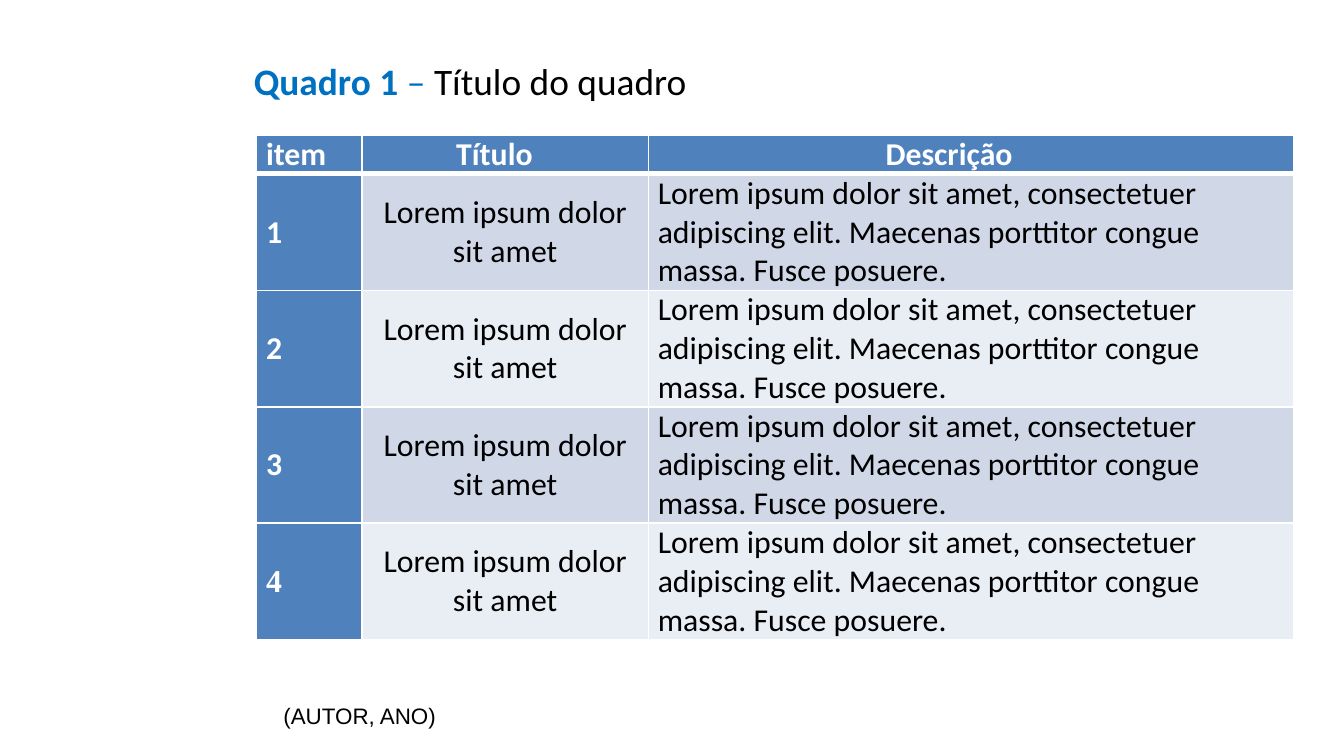
import pptx
import pptx.util
import pptx.dml.color
import pptx.enum.text
import pptx.oxml.ns
import lxml.etree

PX = 4572
WHITE = pptx.dml.color.RGBColor(0xFF, 0xFF, 0xFF)
BLACK = pptx.dml.color.RGBColor(0x00, 0x00, 0x00)
BLUE = pptx.dml.color.RGBColor(0x00, 0x70, 0xC0)
HEADER = pptx.dml.color.RGBColor(0x4F, 0x81, 0xBD)
BANDS = (
    pptx.dml.color.RGBColor(0xD0, 0xD8, 0xE8),
    pptx.dml.color.RGBColor(0xE9, 0xED, 0xF4),
)
CENTER = pptx.enum.text.PP_ALIGN.CENTER
LEFT = pptx.enum.text.PP_ALIGN.LEFT
MIDDLE = pptx.enum.text.MSO_ANCHOR.MIDDLE
TOP = pptx.enum.text.MSO_ANCHOR.TOP
COLUMNS = (157, 426, 961)
HEADINGS = (
    ("item", LEFT, MIDDLE, 14),
    ("Título", CENTER, TOP, 46),
    ("Descrição", CENTER, MIDDLE, 80),
)
HEADER_HEIGHT = 57
ROW_HEIGHT = 173
ITEM_COUNT = 4
ITEM_TITLE = "Lorem ipsum dolor sit amet"
DESCRIPTION = (
    "Lorem ipsum dolor sit amet, consectetuer adipiscing elit. "
    "Maecenas porttitor congue massa. Fusce posuere."
)


def px(length):
    """Turn a length in px into EMU."""
    return pptx.util.Emu(length * PX)


def add_span(para, text, size, color, bold=False, font="Calibri"):
    """Add one formatted run to a paragraph."""
    span = para.add_run()
    span.text = text
    span.font.size = pptx.util.Pt(size)
    span.font.name = font
    span.font.bold = bold
    span.font.color.rgb = color


def add_text(page, left, top, width, height, wrap=True):
    """Add a text box and return its first paragraph."""
    box = page.shapes.add_textbox(px(left), px(top), px(width), px(height))
    box.text_frame.word_wrap = wrap
    box.text_frame.auto_size = pptx.enum.text.MSO_AUTO_SIZE.SHAPE_TO_FIT_TEXT
    return box.text_frame.paragraphs[0]


def set_borders(cell, top, bottom):
    """Draw white cell borders with the given top and bottom widths."""
    properties = cell._tc.get_or_add_tcPr()
    widths = {"lnL": 1, "lnR": 1, "lnT": top, "lnB": bottom}
    for position, (side, width) in enumerate(widths.items()):
        line = lxml.etree.Element(
            pptx.oxml.ns.qn("a:" + side), w=str(pptx.util.Pt(width))
        )
        fill = lxml.etree.SubElement(line, pptx.oxml.ns.qn("a:solidFill"))
        lxml.etree.SubElement(fill, pptx.oxml.ns.qn("a:srgbClr"), val=str(WHITE))
        properties.insert(position, line)


def fill_cell(cell, text, fill, color, align, bold=False, anchor=MIDDLE,
              font="Calibri", right=14, borders=(1, 1)):
    """Write and format one table cell."""
    cell.margin_left, cell.margin_right = px(14), px(right)
    cell.margin_top = cell.margin_bottom = 0
    cell.vertical_anchor = anchor
    cell.fill.solid()
    cell.fill.fore_color.rgb = fill
    set_borders(cell, *borders)
    para = cell.text_frame.paragraphs[0]
    para.alignment = align
    add_span(para, text, 17, color, bold, font)


def add_items_table(page):
    """Add the table with a header row and numbered items."""
    height = HEADER_HEIGHT + ITEM_COUNT * ROW_HEIGHT
    table = page.shapes.add_table(
        ITEM_COUNT + 1, len(COLUMNS), px(382), px(201), px(sum(COLUMNS)), px(height)
    ).table
    table.first_col = True
    for column, width in zip(table.columns, COLUMNS):
        column.width = px(width)
    table.rows[0].height = px(HEADER_HEIGHT)
    for cell, (heading, align, anchor, right) in zip(table.rows[0].cells, HEADINGS):
        fill_cell(cell, heading, HEADER, WHITE, align, True, anchor,
                  right=right, borders=(1, 3))
    for number in range(1, ITEM_COUNT + 1):
        row = table.rows[number]
        row.height = px(ROW_HEIGHT)
        item, title, description = row.cells
        band = BANDS[(number - 1) % 2]
        font = "Times New Roman" if number == ITEM_COUNT else "Calibri"
        borders = (3 if number == 1 else 1, 1)
        fill_cell(item, str(number), HEADER, WHITE, LEFT, True,
                  font=font, borders=borders)
        fill_cell(title, ITEM_TITLE, band, BLACK, CENTER, borders=borders)
        fill_cell(description, DESCRIPTION, band, BLACK, LEFT, borders=borders)


def main():
    """Build the slide and save it."""
    deck = pptx.Presentation()
    deck.slide_width, deck.slide_height = px(2000), px(1125)
    page = deck.slides.add_slide(deck.slide_layouts[6])
    add_items_table(page)
    title = add_text(page, 358, 77, 1590, 88)
    add_span(title, "Quadro 1", 20, BLUE, True)
    add_span(title, " – ", 20, BLUE)
    add_span(title, "Título do quadro", 20, BLACK)
    source = add_text(page, 402, 1035, 270, 60, wrap=False)
    add_span(source, "(AUTOR, ANO)", 12, BLACK, font="Arial")
    deck.save("out.pptx")


if __name__ == "__main__":
    main()
